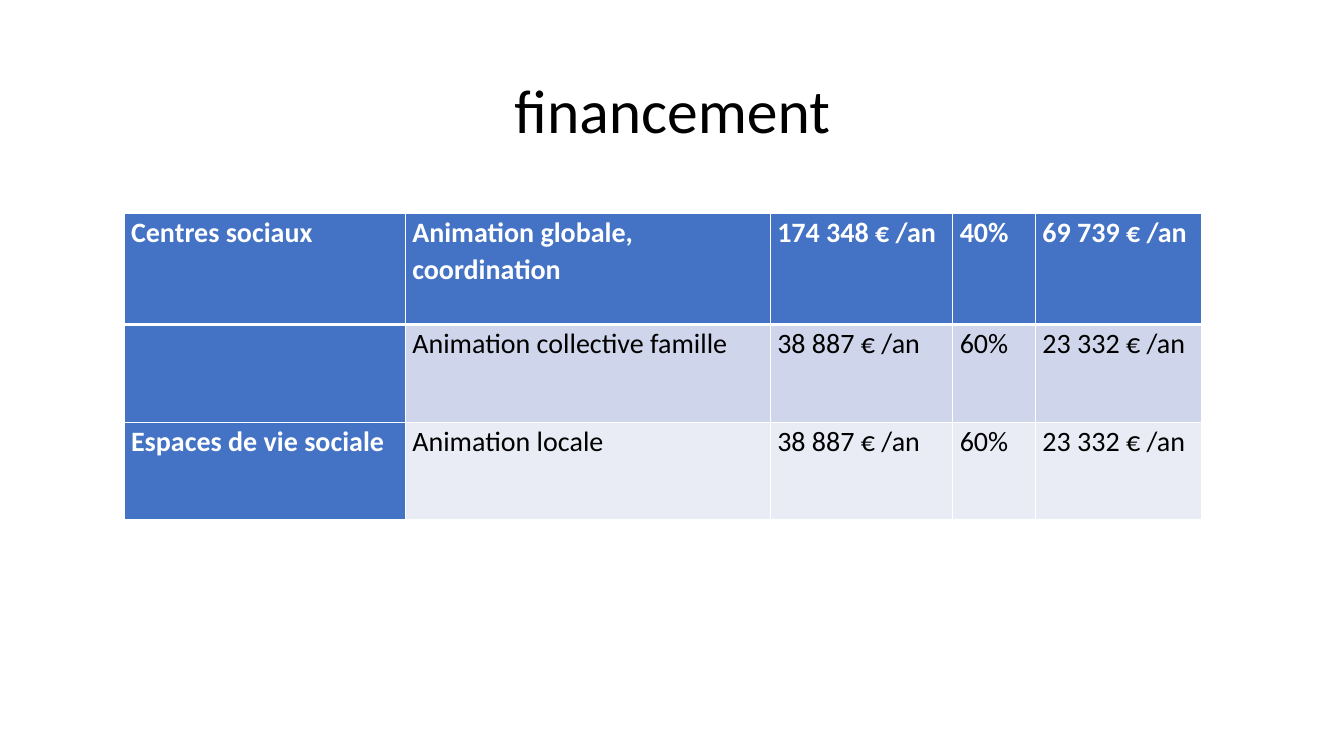
from dataclasses import dataclass

from lxml.etree import SubElement
from pptx import Presentation
from pptx.dml.color import RGBColor
from pptx.enum.text import MSO_ANCHOR, PP_ALIGN
from pptx.oxml.ns import qn
from pptx.slide import Slide
from pptx.table import _Cell as Cell
from pptx.util import Inches, Pt

FONT = "Calibri"
WHITE = RGBColor(0xFF, 0xFF, 0xFF)
BLACK = RGBColor(0x00, 0x00, 0x00)
BLUE = RGBColor(0x44, 0x72, 0xC4)
BAND_DARK = RGBColor(0xCF, 0xD5, 0xEA)
BAND_LIGHT = RGBColor(0xE9, 0xEB, 0xF5)
COL_WIDTHS = (2.79, 3.62, 1.81, 0.82, 1.65)


@dataclass(frozen=True)
class FundingRow:
    height: float
    fill: RGBColor
    texts: tuple[str, ...]


ROWS = (
    FundingRow(1.1, BLUE, ("Centres sociaux", "Animation globale, coordination",
                           "174 348 € /an", "40%", "69 739 € /an")),
    FundingRow(0.97, BAND_DARK, ("", "Animation collective famille",
                                 "38 887 € /an", "60%", "23 332 € /an")),
    FundingRow(0.97, BAND_LIGHT, ("Espaces de vie sociale", "Animation locale",
                                  "38 887 € /an", "60%", "23 332 € /an")),
)


def add_title(slide: Slide, text: str) -> None:
    sp = slide.shapes.title
    sp.left, sp.top = Inches(0.92), Inches(0.4)
    sp.width, sp.height = Inches(11.5), Inches(1.45)
    tf = sp.text_frame
    tf.text = text
    tf.vertical_anchor = MSO_ANCHOR.MIDDLE
    p = tf.paragraphs[0]
    p.alignment = PP_ALIGN.CENTER
    p.line_spacing = 0.9
    p.font.name, p.font.size = FONT, Pt(44)
    p.font.color.rgb = BLACK


def set_borders(cell: Cell, top: float, bottom: float) -> None:
    tc_pr = cell._tc.get_or_add_tcPr()
    for side, width in (("L", 1), ("R", 1), ("T", top), ("B", bottom)):
        ln = SubElement(tc_pr, qn(f"a:ln{side}"), w=str(Pt(width)))
        fill = SubElement(ln, qn("a:solidFill"))
        SubElement(fill, qn("a:srgbClr"), val=str(WHITE))


def format_cell(cell: Cell, text: str, fill: RGBColor, is_heading: bool) -> None:
    cell.fill.solid()
    cell.fill.fore_color.rgb = fill
    cell.margin_left = cell.margin_right = Inches(0.07)
    cell.margin_top = cell.margin_bottom = 0
    cell.text = text
    p = cell.text_frame.paragraphs[0]
    p.line_spacing = 1.07
    p.font.name, p.font.size = FONT, Pt(20)
    p.font.bold = is_heading
    p.font.color.rgb = WHITE if is_heading else BLACK


def add_funding_table(slide: Slide) -> None:
    frame = slide.shapes.add_table(
        len(ROWS), len(COL_WIDTHS), Inches(1.23), Inches(2.12),
        Inches(sum(COL_WIDTHS)), Inches(sum(row.height for row in ROWS)))
    table = frame.table
    table.first_col = True
    for column, width in zip(table.columns, COL_WIDTHS):
        column.width = Inches(width)
    for r, row in enumerate(ROWS):
        table.rows[r].height = Inches(row.height)
        for c, text in enumerate(row.texts):
            cell = table.cell(r, c)
            is_heading = r == 0 or c == 0
            set_borders(cell, top=3 if r == 1 else 1, bottom=3 if r == 0 else 1)
            format_cell(cell, text, BLUE if is_heading else row.fill, is_heading)


def main() -> None:
    prs = Presentation()
    prs.slide_width, prs.slide_height = Inches(13.33), Inches(7.5)
    slide = prs.slides.add_slide(prs.slide_layouts[5])
    add_title(slide, "financement")
    add_funding_table(slide)
    prs.save("out.pptx")


if __name__ == "__main__":
    main()
